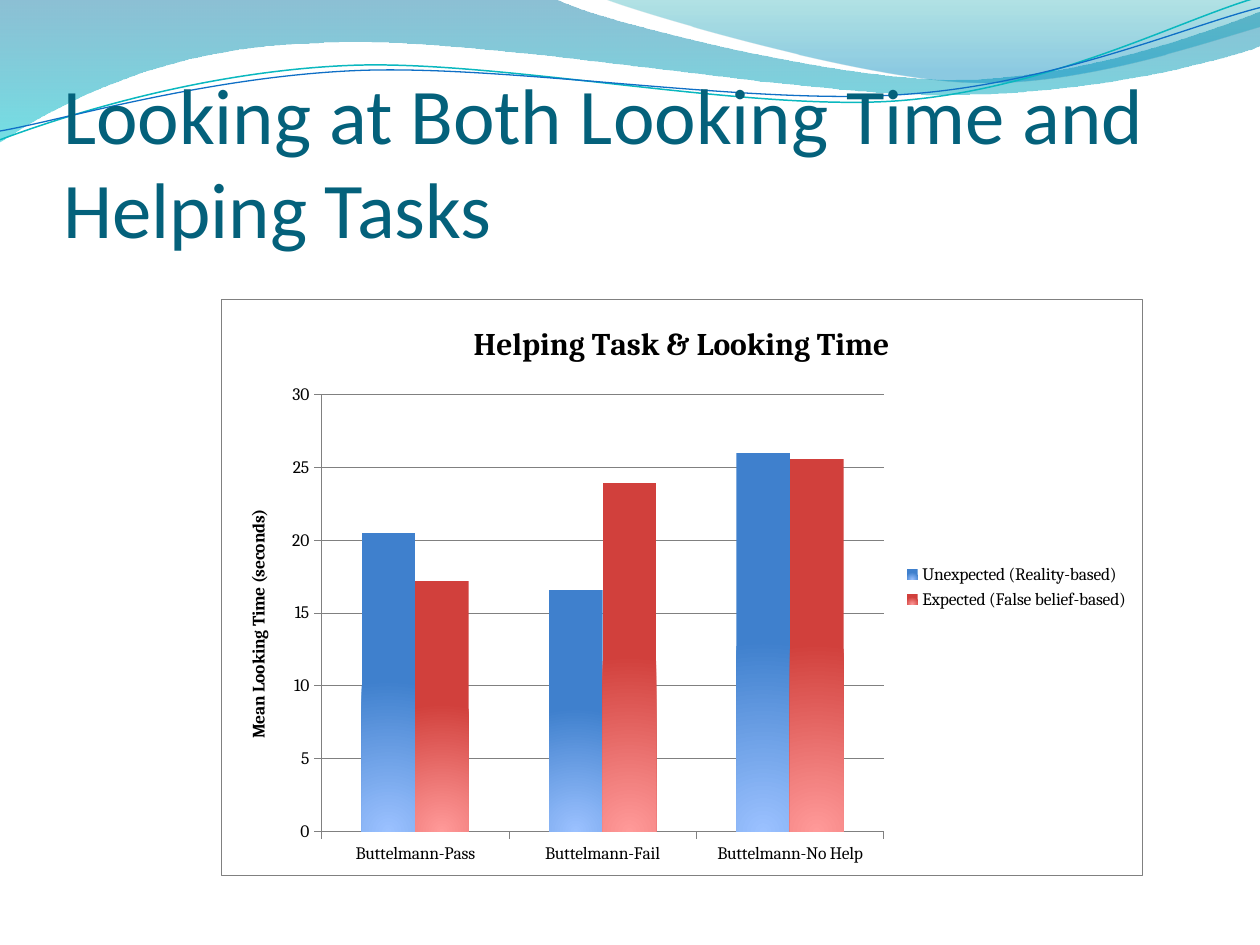
import math
from dataclasses import dataclass

from lxml import etree
from pptx import Presentation
from pptx import util as u
from pptx.chart.data import CategoryChartData
from pptx.dml.color import RGBColor
from pptx.enum import chart as charts
from pptx.enum import text
from pptx.oxml import parse_xml
from pptx.oxml.ns import nsdecls, qn

COLUMNS, ROWS = 100, 75
CELL = u.Inches(0.1)
GREY, BLACK, WHITE = "808080", "000000", "FFFFFF"
CHART_BOX = (17.55, 23.7, 73.1, 45.75)
PLOT_BOX = (7.95, 7.6, 44.65, 34.7)  # measured from the chart's corner


@dataclass
class Stop:
    position: float
    color: str
    opacity: int = 100


@dataclass
class Wave:
    """Grid points: two numbers for a straight step, six for a curve."""
    box: tuple
    start: tuple
    steps: list
    stops: tuple = ()
    line: str = ""
    width: float = 0
    rotation: float = 0


@dataclass
class Series:
    name: str
    values: tuple
    stops: tuple


WAVES = [
    Wave((-0.1, -0.1, 100.2, 11.4), (0, 0),
         [(44, -0.1), (47.6, 1.7, 66.4, 6.3, 75.8, 6.3),
          (85.3, 6.3, 95.8, 2.6, 100, 0.9), (100.1, 3.6),
          (98.3, 4.4, 87, 7.6, 74.6, 7.5),
          (62.2, 7.5, 38.2, 2.8, 25.7, 3.4),
          (12.9, 3.6, 4.6, 8.3, -0.1, 11.3), (0, 0)],
         stops=(Stop(0, "0074A1", 45), Stop(1, "00C6CF", 55))),
    Wave((47.9, -0.1, 52.1, 7), (47.9, -0.1),
         [(50.9, 1.1, 68.2, 6.2, 76.9, 6.5),
          (85.6, 6.9, 96.1, 3.2, 100, 2.1), (100, 0), (47.9, -0.1)],
         stops=(Stop(0, "00A1A9", 30), Stop(0.8, "008BBF", 45))),
    Wave((-0.2, 2.2, 100.2, 7.1), (0, 11.1),
         [(4.8, 9.3, 15.8, 5.7, 27.7, 5.2),
          (39.5, 4.7, 59.3, 8.9, 71.3, 8),
          (83.3, 7.1, 93.8, 1.5, 99.8, -0.2)],
         line="0AB8BF", width=0.85, rotation=357.3),
    Wave((-0.2, 3, 100.3, 5.8), (0, 10.4),
         [(4.7, 9.6, 16.4, 6.1, 28.3, 5.6),
          (40.3, 5.1, 59.7, 8.4, 71.7, 7.5),
          (83.6, 6.7, 94.1, 2.1, 100, 0.6)],
         line="0F6FC6", width=0.75, rotation=357.3),
]
CATEGORIES = ("Buttelmann-Pass", "Buttelmann-Fail", "Buttelmann-No Help")
SERIES = [
    Series("Unexpected (Reality-based)", (20.5, 16.6, 26),
           (Stop(0, "9BC1FF"), Stop(1, "3F80CD"))),
    Series("Expected (False belief-based)", (17.2, 23.9, 25.6),
           (Stop(0, "FF9A99"), Stop(1, "D1403C"))),
]


def cells(*counts: float) -> list:
    return [round(count * CELL) for count in counts]


def rgb(color: str) -> RGBColor:
    return RGBColor.from_string(color)


def fill_gradient(fill, element, stops: tuple):
    """Fill from top to bottom and return the gradient's element."""
    fill.gradient()
    fill.gradient_angle = 270
    for target, stop in zip(fill.gradient_stops, stops):
        target.color.rgb = rgb(stop.color)
        target.position = stop.position
    gradient = next(element.iter(qn("a:gradFill")))
    for color, stop in zip(gradient.iter(qn("a:srgbClr")), stops):
        if stop.opacity < 100:
            etree.SubElement(color, qn("a:alpha"), val=str(stop.opacity * 1000))
    return gradient


def local_point(wave: Wave, x: float, y: float) -> list:
    """Place a page point inside the wave's box before it is rotated."""
    left, top, width, height = wave.box
    dx, dy = x - left - width / 2, y - top - height / 2
    angle = math.radians(-wave.rotation)
    return cells(width / 2 + dx * math.cos(angle) - dy * math.sin(angle),
                 height / 2 + dx * math.sin(angle) + dy * math.cos(angle))


def add_step(outline, tag: str, wave: Wave, numbers: tuple) -> None:
    step = etree.SubElement(outline, qn(tag))
    for x, y in zip(numbers[::2], numbers[1::2]):
        px, py = local_point(wave, x, y)
        etree.SubElement(step, qn("a:pt"), x=str(px), y=str(py))


def draw_wave(page, wave: Wave) -> None:
    left, top, width, height = wave.box
    builder = page.shapes.build_freeform(*cells(left, top), scale=1.0)
    builder.add_line_segments([cells(left + width, top + height)], close=False)
    shape = builder.convert_to_shape()
    outline = next(shape._element.iter(qn("a:path")))
    for straight in list(outline):
        outline.remove(straight)
    add_step(outline, "a:moveTo", wave, wave.start)
    for step in wave.steps:
        add_step(outline, "a:lnTo" if len(step) == 2 else "a:cubicBezTo", wave, step)
    shape.rotation = wave.rotation
    shape.shadow.inherit = False
    if wave.stops:
        etree.SubElement(outline, qn("a:close"))
        fill_gradient(shape.fill, shape._element, wave.stops)
        shape.line.fill.background()
    else:
        shape.fill.background()
        shape.line.color.rgb = rgb(wave.line)
        shape.line.width = u.Pt(wave.width)


def format_font(font, name: str, size: float, color: str, bold: bool = False) -> None:
    font.name, font.size, font.bold = name, u.Pt(size), bold
    font.color.rgb = rgb(color)


def write_title(page, words: str) -> None:
    title = page.shapes.title
    title.left, title.top, title.width, title.height = cells(5, 7.7, 90, 12.5)
    frame = title.text_frame
    frame.word_wrap = True
    frame.auto_size = text.MSO_AUTO_SIZE.NONE
    frame.vertical_anchor = text.MSO_ANCHOR.BOTTOM
    frame.margin_left = frame.margin_right = frame.margin_bottom = 0
    para = frame.paragraphs[0]
    para.alignment = text.PP_ALIGN.LEFT
    span = para.add_run()
    span.text = words
    format_font(span.font, "Calibri", 45, "04617B")
    page.shapes._spTree.append(title._element)  # in front of the waves


def write_chart_text(frame, words: str, size: float) -> None:
    span = frame.paragraphs[0].add_run()
    span.text = words
    format_font(span.font, "Cambria", size, BLACK, bold=True)


def set_line(line) -> None:
    line.color.rgb = rgb(GREY)
    line.width = u.Pt(0.25)


def frame_chart(chart) -> None:
    """Give the chart its background, border and plot position."""
    space = chart._chartSpace
    white = f'<a:solidFill><a:srgbClr val="{WHITE}"/></a:solidFill>'
    space.find(qn("c:chart")).addnext(parse_xml(
        f'<c:spPr {nsdecls("c", "a")}>{white}<a:ln w="{u.Pt(0.25)}"><a:solidFill>'
        f'<a:srgbClr val="{GREY}"/></a:solidFill></a:ln></c:spPr>'))
    plot_area = next(space.iter(qn("c:plotArea")))
    plot_area.append(parse_xml(f'<c:spPr {nsdecls("c", "a")}>{white}</c:spPr>'))
    for old in plot_area.findall(qn("c:layout")):
        plot_area.remove(old)
    layout = etree.Element(qn("c:layout"))
    manual = etree.SubElement(layout, qn("c:manualLayout"))
    for tag, value in (("layoutTarget", "inner"), ("xMode", "edge"), ("yMode", "edge")):
        etree.SubElement(manual, qn(f"c:{tag}"), val=value)
    for tag, part, whole in zip("xywh", PLOT_BOX, CHART_BOX[2:] * 2):
        etree.SubElement(manual, qn(f"c:{tag}"), val=str(part / whole))
    plot_area.insert(0, layout)


def draw_chart(page) -> None:
    data = CategoryChartData()
    data.categories = CATEGORIES
    for series in SERIES:
        data.add_series(series.name, series.values)
    chart = page.shapes.add_chart(charts.XL_CHART_TYPE.COLUMN_CLUSTERED,
                                  *cells(*CHART_BOX), data).chart
    format_font(chart.font, "Cambria", 10, BLACK)
    write_chart_text(chart.chart_title.text_frame, "Helping Task & Looking Time", 18)
    chart.has_legend = True
    chart.legend.position = charts.XL_LEGEND_POSITION.RIGHT
    chart.legend.include_in_layout = False
    for axis in (chart.category_axis, chart.value_axis):
        axis.major_tick_mark = charts.XL_TICK_MARK.OUTSIDE
        set_line(axis.format.line)
    scale = chart.value_axis
    scale.minimum_scale, scale.maximum_scale, scale.major_unit = 0, 30, 5
    set_line(scale.major_gridlines.format.line)
    write_chart_text(scale.axis_title.text_frame, "Mean Looking Time (seconds)", 10)
    plot = chart.plots[0]
    plot.vary_by_categories = False
    plot.gap_width, plot.overlap = 150, 0
    for bars, series in zip(plot.series, SERIES):
        bars.invert_if_negative = False
        gradient = fill_gradient(bars.format.fill, bars._element, series.stops)
        gradient.remove(gradient.find(qn("a:lin")))
        glow = etree.SubElement(gradient, qn("a:path"), path="circle")
        etree.SubElement(glow, qn("a:fillToRect"),
                         l="50000", t="100000", r="50000", b="0")
    frame_chart(chart)


def main() -> None:
    deck = Presentation()
    deck.slide_width, deck.slide_height = cells(COLUMNS, ROWS)
    page = deck.slides.add_slide(deck.slide_layouts[5])
    for wave in WAVES:
        draw_wave(page, wave)
    write_title(page, "Looking at Both Looking Time and Helping Tasks")
    draw_chart(page)
    deck.save("out.pptx")


if __name__ == "__main__":
    main()
